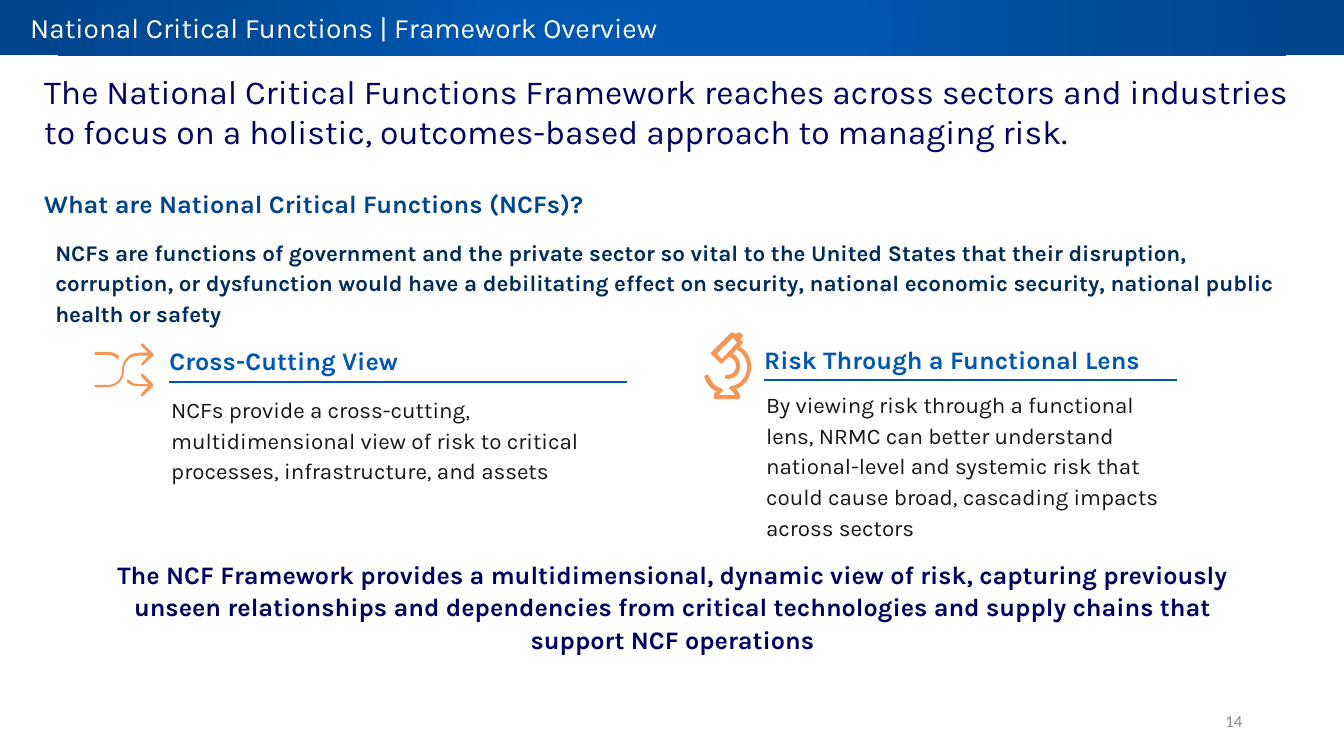
from lxml.etree import SubElement
from pptx import Presentation
from pptx.dml.color import RGBColor
from pptx.enum.shapes import MSO_CONNECTOR, MSO_SHAPE
from pptx.enum.text import MSO_ANCHOR, MSO_AUTO_SIZE, PP_ALIGN
from pptx.oxml import parse_xml
from pptx.oxml.ns import nsdecls, qn
from pptx.util import Inches, Pt

BLUE, DEEP, NAVY = "0057B2", "00458C", "000063"
WHITE, ORANGE, INK = "FFFFFF", "F69654", "161616"

ARROW = [[
    (1.37, 3.53), (1.47, 3.53), (1.4, 3.61), (1.41, 3.63), (1.42, 3.62),
    (1.52, 3.53), (1.52, 3.51), (1.42, 3.41), (1.4, 3.41), (1.4, 3.43),
    (1.47, 3.5), (1.37, 3.5), (1.28, 3.5, 1.21, 3.58, 1.21, 3.67),
    (1.21, 3.68), (1.21, 3.76, 1.15, 3.82, 1.07, 3.82), (0.95, 3.82),
    (0.93, 3.83), (0.95, 3.84), (1.07, 3.84),
    (1.16, 3.84, 1.23, 3.77, 1.23, 3.68), (1.23, 3.67),
    (1.23, 3.59, 1.29, 3.53, 1.37, 3.53),
]]
HOOK = [[
    (1.42, 3.71), (1.4, 3.71), (1.4, 3.73), (1.47, 3.81), (1.37, 3.81),
    (1.34, 3.81, 1.31, 3.8, 1.28, 3.77), (1.26, 3.77), (1.26, 3.79),
    (1.29, 3.82, 1.33, 3.83, 1.37, 3.83), (1.47, 3.83), (1.4, 3.91),
    (1.4, 3.93), (1.42, 3.93), (1.52, 3.83), (1.52, 3.81),
]]
TAIL = [[
    (0.95, 3.52), (1.07, 3.52), (1.1, 3.52, 1.13, 3.53, 1.16, 3.56),
    (1.17, 3.56), (1.18, 3.55), (1.18, 3.53),
    (1.15, 3.51, 1.11, 3.49, 1.07, 3.49), (0.95, 3.49), (0.93, 3.51),
]]
SCOPE = [[
    (7.45, 3.64), (7.45, 3.56, 7.41, 3.48, 7.34, 3.44), (7.36, 3.41),
    (7.37, 3.41, 7.37, 3.39, 7.36, 3.38), (7.34, 3.37), (7.36, 3.35),
    (7.37, 3.34, 7.37, 3.33, 7.36, 3.32), (7.34, 3.3), (7.31, 3.3),
    (7.3, 3.32), (7.28, 3.3), (7.25, 3.3), (7.06, 3.49),
    (7.05, 3.5, 7.05, 3.52, 7.06, 3.52), (7.14, 3.6), (7.16, 3.61),
    (7.17, 3.6), (7.23, 3.54), (7.27, 3.55, 7.3, 3.59, 7.3, 3.63),
    (7.3, 3.68, 7.26, 3.72, 7.21, 3.72),
    (7.2, 3.72, 7.19, 3.73, 7.19, 3.74),
    (7.19, 3.75, 7.2, 3.76, 7.21, 3.76),
    (7.29, 3.76, 7.34, 3.71, 7.34, 3.63),
    (7.34, 3.58, 7.31, 3.53, 7.27, 3.51), (7.3, 3.47), (7.31, 3.47),
    (7.37, 3.5, 7.41, 3.57, 7.41, 3.64),
    (7.41, 3.74, 7.34, 3.82, 7.25, 3.83), (7.23, 3.85), (7.25, 3.87),
    (7.26, 3.88, 7.28, 3.9, 7.29, 3.92), (7.13, 3.92),
    (7.14, 3.91, 7.14, 3.9, 7.16, 3.89), (7.17, 3.87), (7.15, 3.85),
    (7.1, 3.84, 7.06, 3.8, 7.03, 3.73),
    (7.03, 3.72, 7.01, 3.72, 7, 3.72),
    (6.99, 3.72, 6.98, 3.74, 6.99, 3.75),
    (7.01, 3.81, 7.05, 3.86, 7.1, 3.88),
    (7.09, 3.9, 7.08, 3.91, 7.08, 3.94), (7.08, 3.95), (7.1, 3.96),
    (7.32, 3.96), (7.34, 3.95), (7.34, 3.94),
    (7.34, 3.91, 7.32, 3.88, 7.3, 3.86),
    (7.39, 3.83, 7.45, 3.74, 7.45, 3.64),
], [(7.16, 3.56), (7.11, 3.51), (7.27, 3.35), (7.31, 3.4)]]


def tint(code):
    return RGBColor.from_string(code)


def write(shape, text, size=16, color=INK, bold=False, font="Karla",
          align=PP_ALIGN.LEFT, anchor=MSO_ANCHOR.TOP, lead=None, after=0,
          pad=(0.1, 0.05, 0.1, 0.05)):
    frame = shape.text_frame
    frame.word_wrap = True
    frame.auto_size = MSO_AUTO_SIZE.NONE
    frame.vertical_anchor = anchor
    (frame.margin_left, frame.margin_top,
     frame.margin_right, frame.margin_bottom) = map(Inches, pad)
    para = frame.paragraphs[0]
    para.alignment = align
    para.space_after = Pt(after)
    if lead:
        para.line_spacing = Pt(lead)
    run = para.add_run()
    run.text = text
    run.font.name, run.font.size, run.font.bold = font, Pt(size), bold
    run.font.color.rgb = tint(color)


def trace(loop, steps=8):
    points = [loop[0]]
    for part in loop[1:]:
        if len(part) == 2:
            points.append(part)
            continue
        x, y = points[-1]
        a, b, c, d, e, f = part
        for i in range(1, steps + 1):
            t = i / steps
            u = 1 - t
            points.append(tuple(
                u**3 * p + 3 * u * u * t * q + 3 * u * t * t * r + t**3 * s
                for p, q, r, s in ((x, a, c, e), (y, b, d, f))))
    return [(Inches(x), Inches(y)) for x, y in points]


class Deck:
    def __init__(self, width, height):
        self.show = Presentation()
        self.show.slide_width = Inches(width)
        self.show.slide_height = Inches(height)
        self.slide = self.show.slides.add_slide(self.show.slide_layouts[5])
        self.shapes = self.slide.shapes

    def title(self, text, box, stops, **style):
        head = self.shapes.title
        head.left, head.top, head.width, head.height = map(Inches, box)
        marks = "".join(
            f'<a:gs pos="{at * 1000}"><a:srgbClr val="{code}"/></a:gs>'
            for at, code in stops)
        fill = parse_xml(
            f'<a:gradFill {nsdecls("a")} rotWithShape="1">'
            f'<a:gsLst>{marks}</a:gsLst><a:path path="circle">'
            '<a:fillToRect l="50000" t="50000" r="50000" b="50000"/>'
            '</a:path></a:gradFill>')
        head.element.spPr.append(fill)
        write(head, text, **style)

    def label(self, text, box, **style):
        write(self.shapes.add_textbox(*map(Inches, box)), text, **style)

    def panel(self, text, box, **style):
        shape = self.shapes.add_shape(MSO_SHAPE.RECTANGLE, *map(Inches, box))
        self.paint(shape, WHITE)
        write(shape, text, **style)

    def paint(self, shape, color):
        shape.shadow.inherit = False
        shape.fill.solid()
        shape.fill.fore_color.rgb = tint(color)
        shape.line.fill.background()

    def rule(self, left, right, top):
        line = self.shapes.add_connector(
            MSO_CONNECTOR.STRAIGHT, *map(Inches, (left, top, right, top)))
        line.line.color.rgb = tint(BLUE)
        line.line.width = Pt(1.5)
        SubElement(line.element.spPr, qn("a:effectLst"))

    def icon(self, *parts):
        group = self.shapes if len(parts) == 1 else self.shapes.add_group_shape().shapes
        for loops in parts:
            first, *rest = map(trace, loops)
            pen = group.build_freeform(*first[0])
            pen.add_line_segments(first[1:], close=True)
            for loop in rest:
                pen.move_to(*loop[0])
                pen.add_line_segments(loop[1:], close=True)
            self.paint(pen.convert_to_shape(), ORANGE)

    def view(self, head, text, spot, end, body):
        left, top = spot
        self.label(text, body, lead=22)
        self.label(head, (left, top, end - left, 0.32), size=18, color=BLUE,
                   bold=True, pad=(0.31, 0.01, 0, 0), after=6)


def main():
    deck = Deck(13.33, 7.5)
    deck.title("National Critical Functions | Framework Overview",
               (0, 0, 13.33, 0.55),
               [(0, BLUE), (23, BLUE), (69, "004A96"), (97, DEEP)],
               size=20, color=WHITE, anchor=MSO_ANCHOR.MIDDLE,
               pad=(0.3, 0, 0.1, 0))
    deck.label("14", (9.42, 6.95, 3, 0.4), size=12, color="8C8C8C",
               font="Calibri", align=PP_ALIGN.RIGHT, anchor=MSO_ANCHOR.MIDDLE)
    deck.panel("What are National Critical Functions (NCFs)?",
               (0.34, 1.82, 12.64, 0.4), size=18, color=DEEP, bold=True)
    deck.panel("NCFs are functions of government and the private sector so vital to the United States that their disruption, corruption, or dysfunction would have a debilitating effect on security, national economic security, national public health or safety",
               (0.45, 2.28, 12.64, 1), color="002C5A", bold=True, lead=22)
    deck.label("The National Critical Functions Framework reaches across sectors and industries to focus on a holistic, outcomes-based approach to managing risk.",
               (0.34, 0.65, 12.64, 0.91), size=24, color=NAVY)
    deck.panel("The NCF Framework provides a multidimensional, dynamic view of risk, capturing previously unseen relationships and dependencies from critical technologies and supply chains that support NCF operations",
               (0.86, 5.61, 11.62, 0.8), size=18, color=NAVY, bold=True,
               align=PP_ALIGN.CENTER, anchor=MSO_ANCHOR.MIDDLE, lead=23)
    deck.view("Cross-Cutting View",
              "NCFs provide a cross-cutting, multidimensional view of risk to critical processes, infrastructure, and assets",
              (1.37, 3.42), 5.58, (1.6, 3.84, 4.8, 1))
    deck.rule(1.68, 6.22, 3.79)
    deck.view("Risk Through a Functional Lens",
              "By viewing risk through a functional lens, NRMC can better understand national-level and systemic risk that could cause broad, cascading impacts across sectors",
              (7.27, 3.41), 11.67, (7.5, 3.79, 4.26, 1.3))
    deck.rule(7.58, 11.67, 3.77)
    deck.icon(ARROW, HOOK, TAIL)
    deck.icon(SCOPE)
    deck.show.save("out.pptx")


if __name__ == "__main__":
    main()
